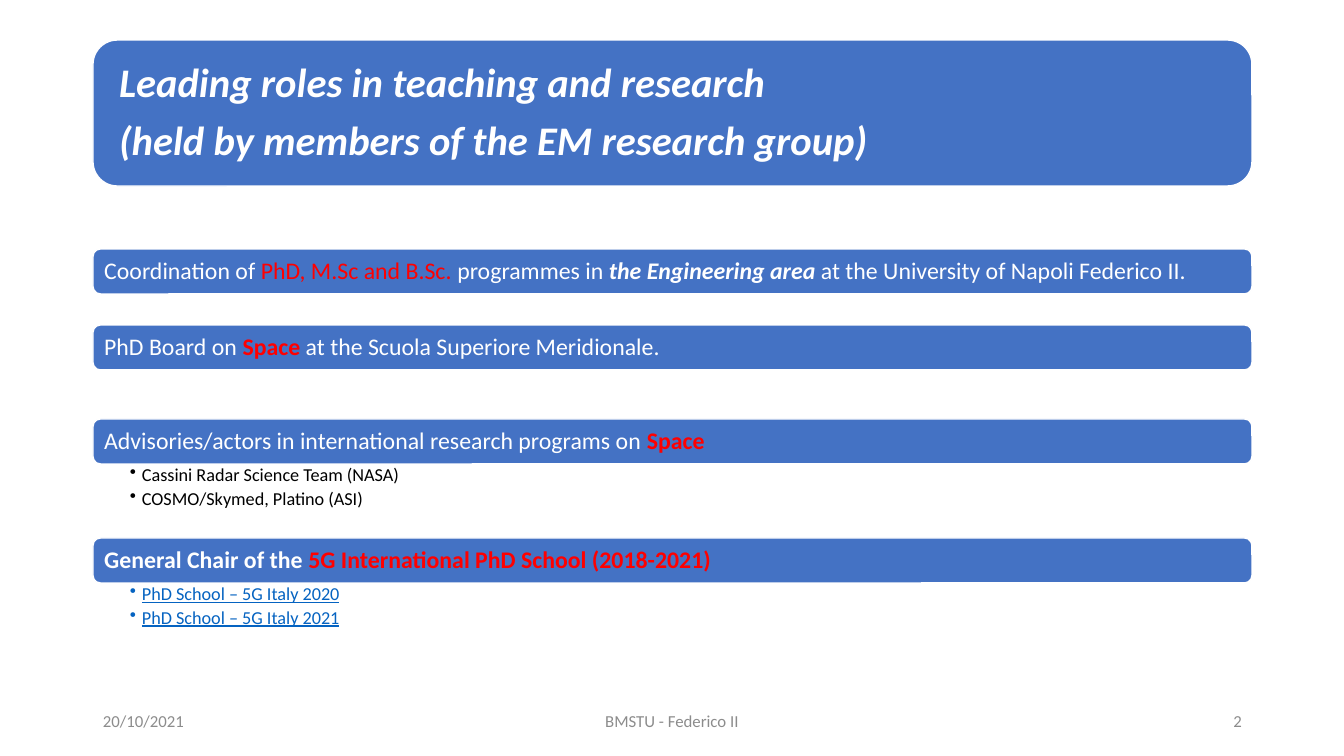
from lxml import etree
from pptx import Presentation
from pptx.dml.color import RGBColor
from pptx.enum.shapes import MSO_SHAPE
from pptx.enum.text import MSO_ANCHOR, PP_ALIGN
from pptx.oxml.ns import qn
from pptx.util import Emu, Pt

ROUNDED = MSO_SHAPE.ROUNDED_RECTANGLE
TOP, MIDDLE = MSO_ANCHOR.TOP, MSO_ANCHOR.MIDDLE
LEFT, CENTER, RIGHT = PP_ALIGN.LEFT, PP_ALIGN.CENTER, PP_ALIGN.RIGHT

COLORS = {
    "white": "FFFFFF",
    "bar": "4472C4",
    "accent": "FF0000",
    "black": "000000",
    "link": "0563C1",
    "footer": "8C8C8C",
}
FONT = "Calibri"
EMU_PER_PX = 914400 / 100.8
MARGIN, CONTENT_WIDTH = 93, 1159
BAR_HEIGHT, BULLETS_HEIGHT = 45, 60
BULLET_INDENT = 12

TITLE = ["Leading roles in teaching and research",
         "(held by members of the EM research group)"]

# Each run is (text, color, style), where style holds b, i or u.
# Each section is (top, heading runs, bullets, bullet color, bullet style).
SECTIONS = [
    (249, [("Coordination of ", "white", ""),
           ("PhD, M.Sc and B.Sc. ", "accent", ""),
           ("programmes in ", "white", ""),
           ("the Engineering area", "white", "bi"),
           (" at the University of Napoli Federico II.", "white", "")],
     [], "black", ""),
    (325, [("PhD Board on ", "white", ""),
           ("Space", "accent", "b"),
           (" at the Scuola Superiore Meridionale.", "white", "")],
     [], "black", ""),
    (419, [("Advisories/actors in international research programs on ", "white", ""),
           ("Space", "accent", "b")],
     ["Cassini Radar Science Team (NASA)", "COSMO/Skymed, Platino (ASI)"],
     "black", ""),
    (538, [("General Chair of the ", "white", "b"),
           ("5G International PhD School (2018-2021)", "accent", "b")],
     ["PhD School – 5G Italy 2020", "PhD School – 5G Italy 2021"],
     "link", "u"),
]

FOOTERS = [
    (93, 302, "20/10/2021", LEFT),
    (445, 454, "BMSTU - Federico II", CENTER),
    (950, 302, "2", RIGHT),
]


def px(length):
    return Emu(round(length * EMU_PER_PX))


def color(name):
    return RGBColor.from_string(COLORS[name])


def set_frame(shape, anchor, left, top, right, bottom):
    """Turn wrapping on and set the anchor and the insets of the text."""
    frame = shape.text_frame
    frame.word_wrap = True
    frame.vertical_anchor = anchor
    frame.margin_left, frame.margin_top = px(left), px(top)
    frame.margin_right, frame.margin_bottom = px(right), px(bottom)
    return frame


def add_bullet(paragraph):
    properties = paragraph._p.get_or_add_pPr()
    properties.set("marL", str(px(BULLET_INDENT)))
    properties.set("indent", str(-px(BULLET_INDENT)))
    etree.SubElement(properties, qn("a:buChar")).set("char", "•")


def fill_text(frame, lines, size, align=LEFT, line_spacing=None, gap=0, bulleted=False):
    """Write one paragraph per list of runs, with gap points between them."""
    for index, runs in enumerate(lines):
        paragraph = frame.add_paragraph() if index else frame.paragraphs[0]
        paragraph.alignment = align
        if line_spacing:
            paragraph.line_spacing = line_spacing
        if index < len(lines) - 1:
            paragraph.space_after = Pt(gap)
        if bulleted:
            add_bullet(paragraph)
        for text, color_name, style in runs:
            run = paragraph.add_run()
            run.text = text
            font = run.font
            font.name, font.size = FONT, Pt(size)
            font.bold, font.italic = "b" in style, "i" in style
            font.underline = "u" in style
            font.color.rgb = color(color_name)


def add_bar(slide, top, height, inset, lines, size, gap=0):
    bar = slide.shapes.add_shape(
        ROUNDED, px(MARGIN), px(top), px(CONTENT_WIDTH), px(height))
    bar.shadow.inherit = False
    bar.fill.solid()
    bar.fill.fore_color.rgb = color("bar")
    bar.line.color.rgb = color("white")
    bar.line.width = Pt(1)
    frame = set_frame(bar, MIDDLE, inset, 0, inset, 0)
    fill_text(frame, lines, size, line_spacing=0.9, gap=gap)


def add_bullets(slide, top, items, color_name, style):
    box = slide.shapes.add_textbox(
        px(MARGIN), px(top), px(CONTENT_WIDTH), px(BULLETS_HEIGHT))
    frame = set_frame(box, TOP, 37, 2, 13, 2)
    lines = [[(item, color_name, style)] for item in items]
    fill_text(frame, lines, 13, line_spacing=0.9, gap=2.6, bulleted=True)


def add_footer(slide, left, width, text, align):
    box = slide.shapes.add_textbox(px(left), px(701), px(width), px(40))
    frame = set_frame(box, MIDDLE, 10, 5, 10, 5)
    fill_text(frame, [[(text, "footer", "")]], 12, align)


def main():
    presentation = Presentation()
    presentation.slide_width, presentation.slide_height = px(1344), px(756)
    slide = presentation.slides.add_slide(presentation.slide_layouts[6])

    title_lines = [[(line, "white", "bi")] for line in TITLE]
    add_bar(slide, 40, 146, 19, title_lines, 29, gap=10)
    for top, heading, bullets, bullet_color, bullet_style in SECTIONS:
        add_bar(slide, top, BAR_HEIGHT, 9, [heading], 17)
        if bullets:
            add_bullets(slide, top + BAR_HEIGHT, bullets, bullet_color, bullet_style)
    for footer in FOOTERS:
        add_footer(slide, *footer)

    presentation.save("out.pptx")


if __name__ == "__main__":
    main()
